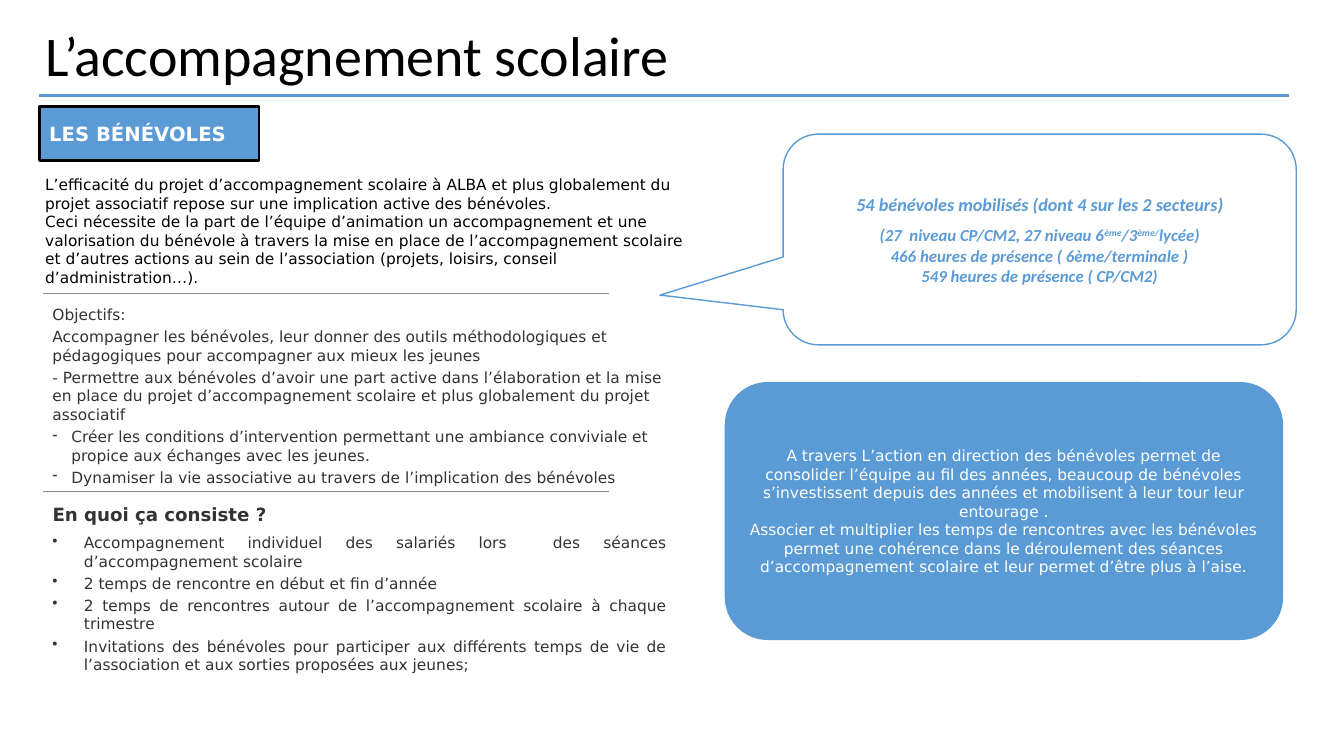
from dataclasses import dataclass

from lxml import etree
from pptx import Presentation
from pptx.dml.color import RGBColor
from pptx.enum import shapes, text
from pptx.oxml import ns
from pptx.util import Pt


@dataclass(frozen=True)
class Theme:
    """Colours, fonts and type sizes of the slide."""
    blue: str = "5B9BD5"
    black: str = "000000"
    white: str = "FFFFFF"
    dark: str = "333333"
    grey: str = "8C8C8C"
    body_font: str = "DejaVu Sans"
    title_font: str = "Calibri"
    title: float = 40
    badge: float = 14
    heading: float = 13
    figures: float = 12
    body: float = 11


@dataclass(frozen=True)
class Box:
    """A rectangle in points."""
    left: float
    top: float
    width: float
    height: float

    def lengths(self):
        """Return the four lengths for python-pptx."""
        return [Pt(value) for value in (self.left, self.top, self.width, self.height)]


THEME = Theme()
LEFT, CENTER, JUSTIFY = text.PP_ALIGN.LEFT, text.PP_ALIGN.CENTER, text.PP_ALIGN.JUSTIFY
TOP, MIDDLE, BOTTOM = text.MSO_ANCHOR.TOP, text.MSO_ANCHOR.MIDDLE, text.MSO_ANCHOR.BOTTOM
KINDS = shapes.MSO_SHAPE
WIDE_INSETS = (24.5, 8.6, 24.5, 0)
DEFAULT_INSETS = (7.2, 3.6, 7.2, 3.6)


def add_paragraph(frame, content, size=THEME.body, color=THEME.black, font=THEME.body_font,
                  bold=False, italic=False, align=LEFT, before=0, spacing=1.0,
                  bullet=None, indent=0):
    """Add a paragraph; every second part of a list is superscript."""
    first = frame.paragraphs[0]
    paragraph = frame.add_paragraph() if first.runs else first
    paragraph.alignment = align
    paragraph.space_before = Pt(before)
    paragraph.line_spacing = spacing
    if bullet:
        properties = paragraph._p.get_or_add_pPr()
        properties.set("marL", str(Pt(indent)))
        properties.set("indent", str(-Pt(indent)))
        etree.SubElement(properties, ns.qn("a:buChar"), char=bullet)
    for index, part in enumerate([content] if isinstance(content, str) else content):
        run = paragraph.add_run()
        run.text = part
        run.font.name, run.font.size = font, Pt(size)
        run.font.bold, run.font.italic = bold, italic
        run.font.color.rgb = RGBColor.from_string(color)
        if index % 2:
            run._r.get_or_add_rPr().set("baseline", "30000")


def prepare_frame(shape, anchor=TOP, insets=DEFAULT_INSETS):
    """Set wrapping, anchor and insets, and return the text frame."""
    frame = shape.text_frame
    frame.word_wrap = True
    frame.vertical_anchor = anchor
    frame.margin_left, frame.margin_top, frame.margin_right, frame.margin_bottom = map(Pt, insets)
    return frame


def add_text_box(slide, box, anchor=TOP, insets=DEFAULT_INSETS):
    """Add a text box and return its frame."""
    return prepare_frame(slide.shapes.add_textbox(*box.lengths()), anchor, insets)


def add_panel(slide, kind, box, fill=None, line=None, weight=1, adjustments=()):
    """Add a preset shape and return its vertically centred frame."""
    shape = slide.shapes.add_shape(kind, *box.lengths())
    shape.shadow.inherit = False
    for index, value in enumerate(adjustments):
        shape.adjustments[index] = value
    if fill:
        shape.fill.solid()
        shape.fill.fore_color.rgb = RGBColor.from_string(fill)
    else:
        shape.fill.background()
    if line:
        shape.line.color.rgb = RGBColor.from_string(line)
        shape.line.width = Pt(weight)
    else:
        shape.line.fill.background()
    return prepare_frame(shape, MIDDLE)


def add_rule(slide, left, right, y, color, weight):
    """Add a horizontal line."""
    rule = slide.shapes.add_connector(
        shapes.MSO_CONNECTOR.STRAIGHT, Pt(left), Pt(y), Pt(right), Pt(y))
    rule.line.color.rgb = RGBColor.from_string(color)
    rule.line.width = Pt(weight)
    etree.SubElement(rule._element.spPr, ns.qn("a:effectLst"))


def add_header(slide, box):
    """Place the title, its rule and the section badge."""
    title = add_text_box(slide, Box(box.left - 2.8, box.top, 771, 67), BOTTOM)
    add_paragraph(title, "L’accompagnement scolaire", size=THEME.title,
                  font=THEME.title_font, spacing=0.9)
    add_rule(slide, box.left, box.left + box.width, box.top + 68.4, THEME.blue, 2.25)
    badge = add_panel(slide, KINDS.RECTANGLE, Box(box.left, box.top + 76.3, 157, 38.2),
                      THEME.blue, THEME.black, 2)
    add_paragraph(badge, "LES BÉNÉVOLES", size=THEME.badge, color=THEME.white, bold=True)


def add_introduction(slide, box):
    """Place the opening paragraphs."""
    frame = add_text_box(slide, box)
    for content in (
        "L’efficacité du projet d’accompagnement scolaire à ALBA et plus globalement du projet "
        "associatif repose sur une implication active des bénévoles.",
        "Ceci nécessite de la part de l’équipe d’animation un accompagnement et une valorisation "
        "du bénévole à travers la mise en place de l’accompagnement scolaire et d’autres actions "
        "au sein de l’association (projets, loisirs, conseil d’administration…).",
    ):
        add_paragraph(frame, content)


def add_objectives(slide, box):
    """Place the objectives and the actions, each under a divider."""
    frame = add_text_box(slide, box, insets=WIDE_INSETS)
    style = dict(color=THEME.dark, before=2.6)
    for content in (
        "Objectifs:",
        "Accompagner les bénévoles, leur donner des outils méthodologiques et pédagogiques "
        "pour accompagner aux mieux les jeunes",
        "- Permettre aux bénévoles d’avoir une part active dans l’élaboration et la mise en place "
        "du projet d’accompagnement scolaire et plus globalement du projet associatif",
    ):
        add_paragraph(frame, content, **style)
    for content in (
        "Créer les conditions d’intervention permettant une ambiance conviviale et propice "
        "aux échanges avec les jeunes.",
        "Dynamiser la vie associative au travers de l’implication des bénévoles",
    ):
        add_paragraph(frame, content, bullet="-", indent=13.5, **style)
    actions = (
        "Accompagnement individuel des salariés lors  des séances d’accompagnement scolaire",
        "2 temps de rencontre en début et fin d’année",
        "2 temps de rencontres autour de l’accompagnement scolaire à chaque trimestre",
        "Invitations des bénévoles pour participer aux différents temps de vie de l’association "
        "et aux sorties proposées aux jeunes;",
    )
    for index, content in enumerate(actions):
        add_paragraph(frame, content, color=THEME.dark, before=2.6 if index else 33.5,
                      align=JUSTIFY, bullet="•", indent=22.5)
    heading = add_text_box(slide, Box(box.left, box.top + 141.1, 461, 43), insets=WIDE_INSETS)
    add_paragraph(heading, "En quoi ça consiste ?", size=THEME.heading, bold=True,
                  align=JUSTIFY, **style)
    for offset in (0, 141.9):
        add_rule(slide, box.left + 18, box.left + 422, box.top + offset, THEME.grey, 0.75)


def add_figures(slide, box):
    """Place the callout with the volunteer figures."""
    frame = add_panel(slide, KINDS.ROUNDED_RECTANGULAR_CALLOUT, box, line=THEME.blue,
                      adjustments=(-0.74, 0.264, 0.167))
    for content, size, spacing in (
        ("54 bénévoles mobilisés (dont 4 sur les 2 secteurs)", THEME.heading, 1.0),
        (("(27  niveau CP/CM2, 27 niveau 6", "ème", "/3", "ème/", "lycée)"), THEME.figures, 1.5),
        ("466 heures de présence ( 6ème/terminale )", THEME.figures, 1.0),
        ("549 heures de présence ( CP/CM2)", THEME.figures, 1.0),
    ):
        add_paragraph(frame, content, size=size, spacing=spacing, color=THEME.blue,
                      font=THEME.title_font, bold=True, italic=True, align=CENTER)


def add_outcome(slide, box):
    """Place the filled panel with the outcome."""
    frame = add_panel(slide, KINDS.ROUNDED_RECTANGLE, box, fill=THEME.blue)
    for content in (
        "A travers L’action en direction des bénévoles permet de consolider l’équipe au fil des "
        "années, beaucoup de bénévoles s’investissent depuis des années et mobilisent à leur tour "
        "leur entourage .",
        "Associer et multiplier les temps de rencontres avec les bénévoles permet une cohérence "
        "dans le déroulement des séances d’accompagnement scolaire et leur permet d’être plus "
        "à l’aise.",
    ):
        add_paragraph(frame, content, color=THEME.white, align=CENTER)


def main():
    """Build the slide and save it."""
    presentation = Presentation()
    presentation.slide_width, presentation.slide_height = Pt(960), Pt(540)
    slide = presentation.slides.add_slide(presentation.slide_layouts[6])
    add_header(slide, Box(28, 0, 893, 115))
    add_introduction(slide, Box(25.2, 121.7, 480.2, 87.1))
    add_objectives(slide, Box(13, 209.5, 488, 313))
    add_figures(slide, Box(559.4, 95.8, 366.5, 150.5))
    add_outcome(slide, Box(517.7, 272.9, 398.9, 184.3))
    presentation.save("out.pptx")


if __name__ == "__main__":
    main()
